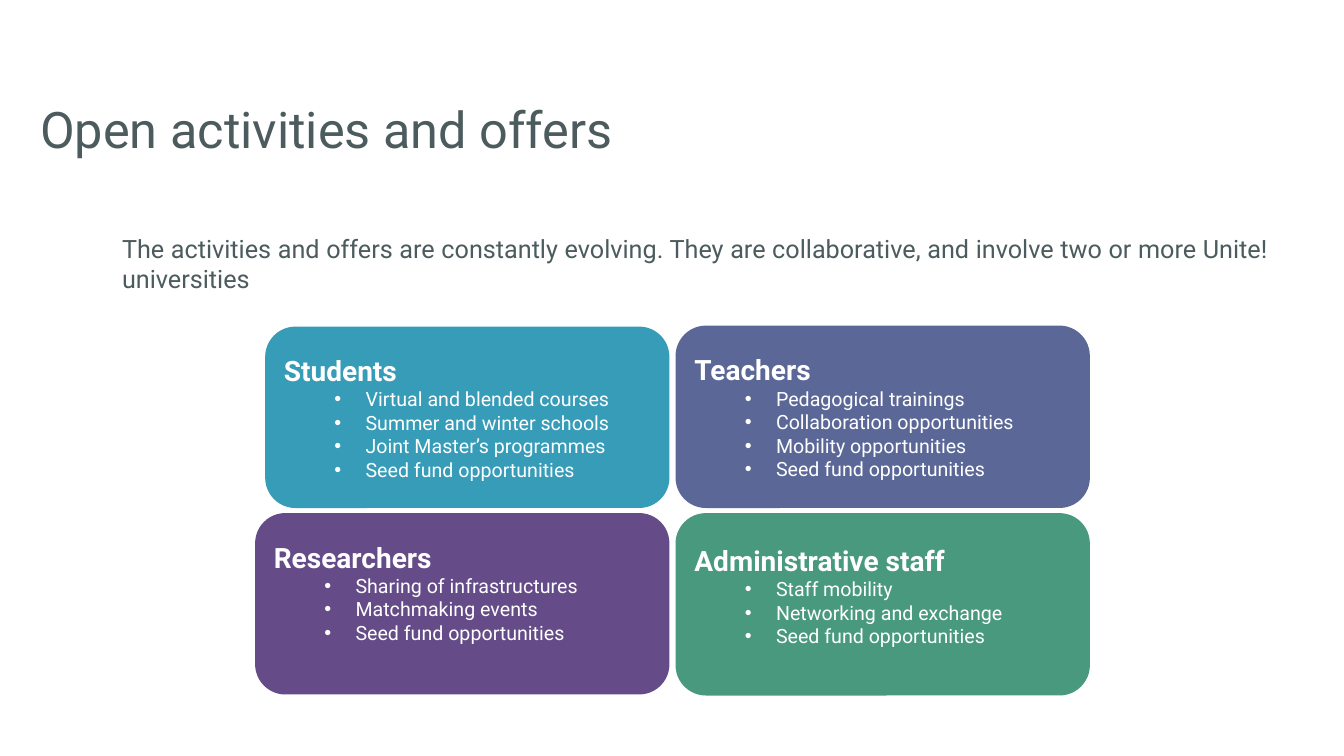
from lxml import etree
from pptx import Presentation
from pptx.dml.color import RGBColor
from pptx.enum.shapes import MSO_SHAPE
from pptx.enum.text import MSO_ANCHOR, MSO_AUTO_SIZE, PP_ALIGN
from pptx.oxml.ns import qn
from pptx.util import Inches, Pt

ROUND = MSO_SHAPE.ROUNDED_RECTANGLE
TOP, MIDDLE = MSO_ANCHOR.TOP, MSO_ANCHOR.MIDDLE
LEFT, JUSTIFY = PP_ALIGN.LEFT, PP_ALIGN.JUSTIFY
FIXED = MSO_AUTO_SIZE.NONE

# Content
FONT, INK, WHITE = "Roboto", "4C5B5D", "FFFFFF"
TITLE = "Open activities and offers"
INTRO = ("The activities and offers are constantly evolving. They are "
         "collaborative, and involve two or more Unite! universities")
# Heading, fill, box (left, top, width, height), bottom inset, offers
CARDS = [
    ("Students", "369CB8", (2.63, 3.24, 4.01, 1.8), 0.05,
     ["Virtual and blended courses", "Summer and winter schools",
      "Joint Master’s programmes", "Seed fund opportunities"]),
    ("Teachers", "5B6897", (6.7, 3.23, 4.11, 1.81), 0.05,
     ["Pedagogical trainings", "Collaboration opportunities",
      "Mobility opportunities", "Seed fund opportunities"]),
    ("Researchers", "654C88", (2.53, 5.09, 4.11, 1.8), 0.28,
     ["Sharing of infrastructures", "Matchmaking events",
      "Seed fund opportunities"]),
    ("Administrative staff", "49997F", (6.7, 5.09, 4.11, 1.81), 0.22,
     ["Staff mobility", "Networking and exchange",
      "Seed fund opportunities"]),
]


def color(code):
    return RGBColor.from_string(code)


def style(para, size, code, bold=False, align=LEFT):
    para.alignment = align
    para.space_before = Pt(0)
    for run in para.runs:
        font = run.font
        font.name, font.size, font.bold = FONT, Pt(size), bold
        font.color.rgb = color(code)


def indent(para, left, hang=0, mark=None):
    props = para._p.get_or_add_pPr()
    props.set("marL", str(Inches(left)))
    props.set("indent", str(Inches(hang)))
    if mark:
        tint = etree.SubElement(props, qn("a:buClr"))
        etree.SubElement(tint, qn("a:srgbClr"), val=WHITE)
        etree.SubElement(props, qn("a:buFont"), typeface="Arial")
        etree.SubElement(props, qn("a:buChar"), char=mark)
    else:
        etree.SubElement(props, qn("a:buNone"))


def place(shape, box, text, top=0):
    shape.left, shape.top, shape.width, shape.height = map(Inches, box)
    frame = shape.text_frame
    frame.margin_left = frame.margin_right = frame.margin_bottom = 0
    frame.margin_top = Inches(top)
    frame.vertical_anchor, frame.auto_size = TOP, FIXED
    frame.word_wrap = True
    frame.text = text
    return frame.paragraphs[0]


def card(slide, head, fill, box, bottom, offers):
    shape = slide.shapes.add_shape(ROUND, *map(Inches, box))
    shape.shadow.inherit = False
    shape.fill.solid()
    shape.fill.fore_color.rgb = color(fill)
    shape.line.fill.background()
    frame = shape.text_frame
    frame.word_wrap, frame.vertical_anchor = True, MIDDLE
    frame.margin_bottom = Inches(bottom)
    frame.text = "\n".join([head, *offers])
    first, *rest = frame.paragraphs
    style(first, 20, WHITE, bold=True)
    for para in rest:
        para.level = 1
        indent(para, 0.81, -0.31, "•")
        style(para, 14, WHITE)


def main():
    deck = Presentation()
    deck.slide_width, deck.slide_height = Inches(13.33), Inches(7.5)
    slide = deck.slides.add_slide(deck.slide_layouts[1])

    # Title and introduction
    title = place(slide.shapes.title, (0.4, 0.92, 12.54, 0.91), TITLE, 0.05)
    style(title, 36, INK)
    intro = place(slide.placeholders[1], (1.09, 2.31, 11.49, 4.82), INTRO)
    indent(intro, 0.12)
    style(intro, 18, INK, align=JUSTIFY)

    # Audience cards
    for item in CARDS:
        card(slide, *item)
    deck.save("out.pptx")


if __name__ == "__main__":
    main()
